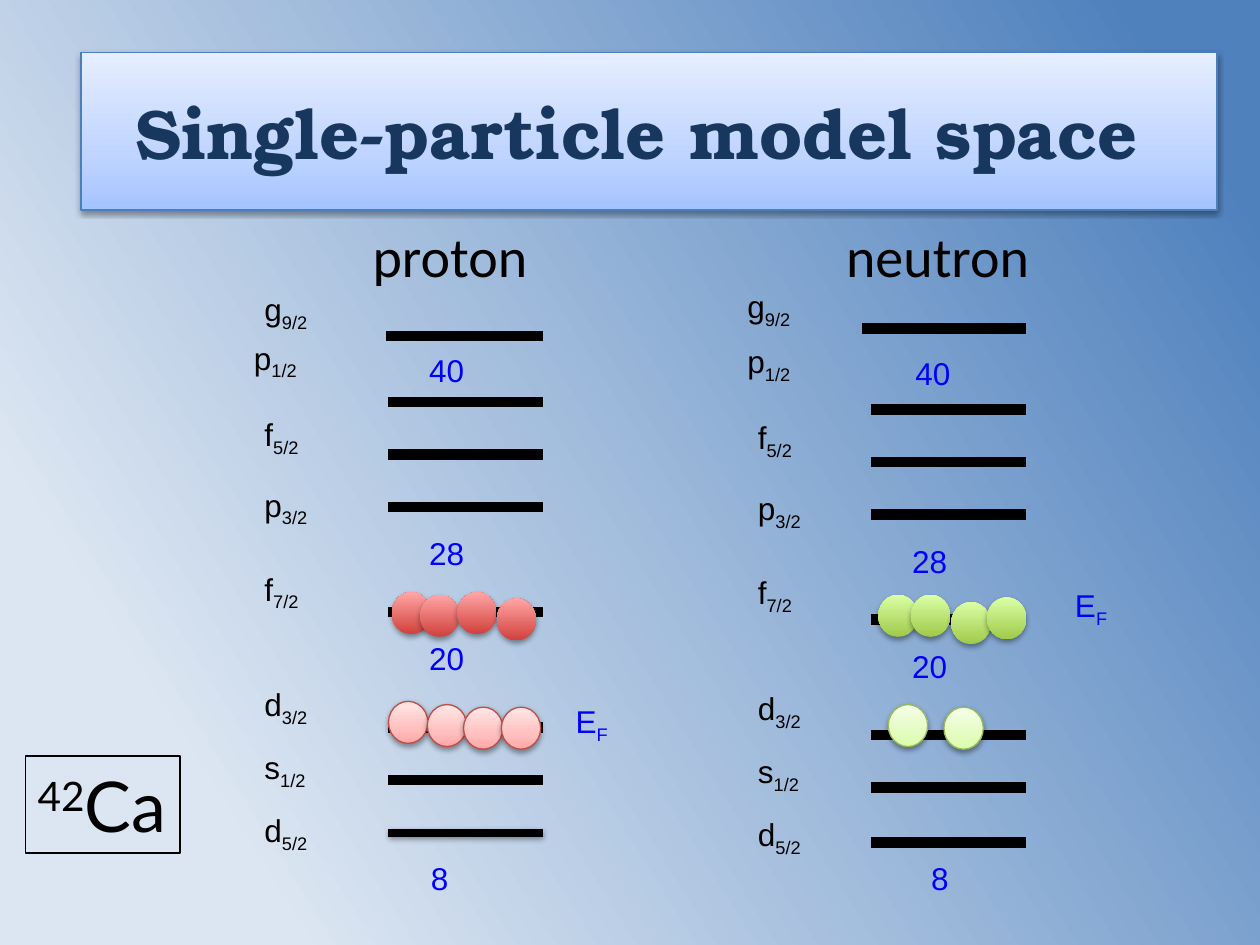
"""Build a slide of proton and neutron single-particle levels for 42Ca."""
from dataclasses import dataclass

import lxml.etree
import pptx
import pptx.dml.color
import pptx.enum.shapes
import pptx.enum.text
import pptx.oxml.ns
import pptx.util

COLS, ROWS = 120, 90
BALL_W, BALL_H = 3.75, 4
LEVELS = (("g", "9/2"), ("p", "1/2"), ("f", "5/2"), ("p", "3/2"),
          ("f", "7/2"), ("d", "3/2"), ("s", "1/2"), ("d", "5/2"))
MAGIC = ("40", "28", "20", "8")


@dataclass(frozen=True)
class Theme:
    """Colours, fonts, type sizes and line widths of the slide."""
    ink: str = "000000"
    accent: str = "0000FF"
    title: str = "17375E"
    title_edge: str = "4B7EBC"
    title_font: str = "TeX Gyre Bonum"
    head_font: str = "Calibri"
    label_font: str = "Arial"
    nucleus_font: str = "Lato"
    big: int = 40
    head: int = 32
    label: int = 18
    level: float = 6
    thin_level: float = 4.5
    edge: float = 0.75
    background: tuple = ((16, "DCE6F2"), (93, "4F81BD"))
    banner: tuple = ((0, "A4C4FF"), (35, "BFD4FF"), (100, "E6EEFF"))
    red: tuple = ((0, "D1403C"), (100, "FFA6A5"))
    pale_red: tuple = ((0, "FFA6A5"), (35, "FFC0BF"), (100, "FFE7E7"))
    red_edge: str = "BF4C48"
    green: tuple = ((0, "A0CA4A"), (100, "DAFFA5"))
    pale_green: tuple = ((0, "DAFDA7"), (35, "E4FCC2"), (100, "F5FFE7"))
    green_edge: str = "98B955"


T = Theme()


@dataclass(frozen=True)
class Side:
    """One column of levels, with all places in grid units."""
    name: str
    head_x: float
    head_w: float
    label_x: tuple
    label_y: tuple
    line_x: tuple
    line_end: float
    line_y: tuple
    magic_x: tuple
    magic_y: tuple
    fermi: tuple
    valence: tuple
    core: tuple
    valence_fill: tuple
    core_fill: tuple
    core_edge: str
    bottom_width: float


PROTON = Side(
    "proton", 34.3, 17.4,
    (24, 23, *[24] * 6), (27, 31.65, 38.9, 45.65, 53.65, 64.65, 70.65, 76.65),
    (36.75, *[37] * 7), 51.7, (32, 38.3, 43.3, 48.3, 58.3, 69.3, 74.3, 79.3),
    (39.7, 39.7, 39.7, 39.85), (32.8, 50.3, 60.3, 81.2), (53.65, 66.25),
    ((37.3, 56.4), (40, 56.65), (43.55, 56.4), (47.3, 57)),
    ((37, 66.8), (40.7, 67.1), (44.15, 67.35), (47.75, 67.35)),
    T.red, T.pale_red, T.red_edge, T.thin_level)
NEUTRON = Side(
    "neutron", 79.4, 20.15,
    (70, 70, *[71] * 6), (26.75, 32, 39.25, 46, 54, 65, 71, 77),
    (82.1, *[83] * 7), 97.7, (31.3, 39, 44, 49, 59, 70, 75, 80.25),
    (85.7 + 0.3, 85.7, 85.7, 87.5), (33.1, 51, 61, 81.2), (101.2, 55.2),
    ((83.65, 56.65), (86.75, 56.65), (90.6, 57.35), (94, 56.9)),
    ((89.9, 67.35), (84.6, 67.1)),
    T.green, T.pale_green, T.green_edge, T.level)


def x(cols):
    """Turn grid columns into a length."""
    return pptx.util.Inches(10 * cols / COLS)


def y(rows):
    """Turn grid rows into a length."""
    return pptx.util.Inches(7.5 * rows / ROWS)


def rgb(code):
    """Turn a hex code into a colour."""
    return pptx.dml.color.RGBColor.from_string(code)


def sub(parent, tag, **attrs):
    """Append a DrawingML element to its parent."""
    return lxml.etree.SubElement(parent, pptx.oxml.ns.qn(f"a:{tag}"), attrs)


def paint(fill, element, stops, angle=90):
    """Fill with a linear gradient of any number of stops."""
    fill.gradient()
    fill.gradient_angle = angle
    gs_list = next(element.iter(pptx.oxml.ns.qn("a:gsLst")))
    for gs in list(gs_list):
        gs_list.remove(gs)
    for pos, color in stops:
        sub(sub(gs_list, "gs", pos=str(pos * 1000)), "srgbClr", val=color)


def outline(s, color, width):
    """Draw the line of a shape or connector."""
    s.line.color.rgb = rgb(color)
    s.line.width = pptx.util.Pt(width)


def effects(s, shadow=True):
    """Give a shape a soft drop shadow, or no effect at all."""
    lst = sub(s._element.spPr, "effectLst")
    if shadow:
        shdw = sub(lst, "outerShdw", blurRad="40000", dist="20000",
                   dir="5400000", rotWithShape="0")
        sub(sub(shdw, "srgbClr", val="000000"), "alpha", val="38000")


def write(p, text, font=T.label_font, size=T.label, color=T.ink, bold=False, base=0):
    """Add a formatted run, raised or lowered by a percentage."""
    r = p.add_run()
    r.text = text
    r.font.name = font
    r.font.size = pptx.util.Pt(size)
    r.font.color.rgb = rgb(color)
    r.font.bold = bold
    if base:
        r._r.get_or_add_rPr().set("baseline", str(base * 1000))


def add_text(slide, left, top, width, height, *parts, **fmt):
    """Add a text box from (text, baseline) parts."""
    s = slide.shapes.add_textbox(x(left), y(top), x(width), y(height))
    tf = s.text_frame
    tf.word_wrap = False
    tf.auto_size = pptx.enum.text.MSO_AUTO_SIZE.SHAPE_TO_FIT_TEXT
    for text, base in parts:
        write(tf.paragraphs[0], text, base=base, **fmt)
    return s


def add_title(slide, text):
    """Format the title placeholder as a banner."""
    s = slide.shapes.title
    s.left, s.top, s.width, s.height = x(7.7), y(5), x(108.2), y(15)
    paint(s.fill, s._element, T.banner)
    outline(s, T.title_edge, T.edge)
    effects(s)
    tf = s.text_frame
    tf.vertical_anchor = pptx.enum.text.MSO_ANCHOR.MIDDLE
    p = tf.paragraphs[0]
    p.alignment = pptx.enum.text.PP_ALIGN.CENTER
    write(p, text, font=T.title_font, size=T.big, color=T.title, bold=True)


def add_level(slide, left, right, row, width):
    """Draw one energy level; thin ones carry a shadow."""
    s = slide.shapes.add_connector(pptx.enum.shapes.MSO_CONNECTOR.STRAIGHT,
                                   x(left), y(row), x(right), y(row))
    outline(s, T.ink, width)
    effects(s, shadow=width == T.thin_level)


def add_balls(slide, places, stops, edge=None):
    """Draw the nucleons that fill a level."""
    for left, top in places:
        s = slide.shapes.add_shape(pptx.enum.shapes.MSO_SHAPE.OVAL,
                                   x(left), y(top), x(BALL_W), y(BALL_H))
        paint(s.fill, s._element, stops)
        if edge:
            outline(s, edge, T.edge)
        else:
            s.line.fill.background()
        effects(s)


def add_side(slide, side):
    """Draw the levels, labels, shell closures and nucleons of one side."""
    add_text(slide, side.head_x, 20.5, side.head_w, 7.7, (side.name, 0),
             font=T.head_font, size=T.head)
    widths = [T.level] * 7 + [side.bottom_width]
    for left, row, width in zip(side.line_x, side.line_y, widths):
        add_level(slide, left, side.line_end, row, width)
    for (orbit, spin), left, top in zip(LEVELS, side.label_x, side.label_y):
        add_text(slide, left, top, 10, 4.85, (orbit, 0), (spin, -25))
    for number, left, top in zip(MAGIC, side.magic_x, side.magic_y):
        add_text(slide, left, top, 8.4, 7.5, (number, 0), color=T.accent)
    add_text(slide, *side.fermi, 8.2, 7.5, ("E", 0), ("F", -25), color=T.accent)
    add_balls(slide, side.core, side.core_fill, side.core_edge)
    add_balls(slide, side.valence, side.valence_fill)


def main():
    """Build and save the slide."""
    prs = pptx.Presentation()
    prs.slide_width, prs.slide_height = x(COLS), y(ROWS)
    slide = prs.slides.add_slide(prs.slide_layouts[5])
    paint(slide.background.fill, slide._element, T.background, angle=32)
    add_title(slide, "Single-particle model space ")
    for side in (PROTON, NEUTRON):
        add_side(slide, side)
    s = add_text(slide, 2.4, 72, 14.75, 9.25, ("42", 30), ("Ca", 0),
                 font=T.nucleus_font, size=T.big)
    outline(s, T.ink, T.edge)
    prs.save("out.pptx")


if __name__ == "__main__":
    main()
